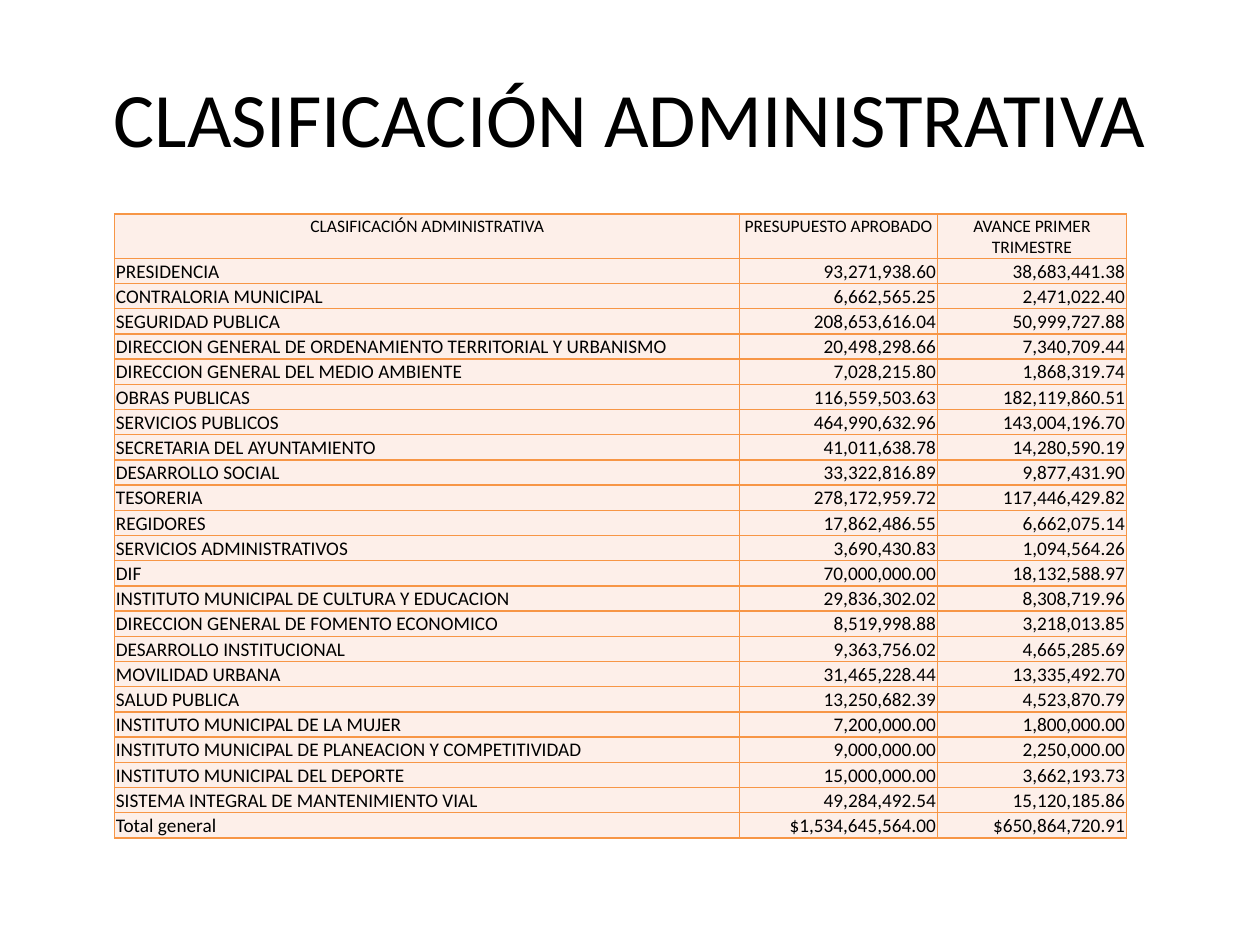
from lxml.etree import SubElement
from pptx import Presentation
from pptx.dml.color import RGBColor
from pptx.enum.text import MSO_ANCHOR as Anchor, PP_ALIGN as Align
from pptx.oxml.ns import qn
from pptx.util import Inches, Pt

FONT = "Calibri"
COLORS = {"text": "000000", "cell": "FDEFE9", "border": "F79646"}

COLUMN_WIDTHS = [4.96, 1.57, 1.5]
HEADER_HEIGHT, ROW_HEIGHT = 0.35, 0.2
COLUMN_ALIGNS = [Align.LEFT, Align.RIGHT, Align.RIGHT]

TITLE = "CLASIFICACIÓN ADMINISTRATIVA"
HEADER = ("CLASIFICACIÓN ADMINISTRATIVA", "PRESUPUESTO APROBADO", "AVANCE PRIMER TRIMESTRE")
BUDGETS = [
    ("PRESIDENCIA", "93,271,938.60", "38,683,441.38"),
    ("CONTRALORIA MUNICIPAL", "6,662,565.25", "2,471,022.40"),
    ("SEGURIDAD PUBLICA", "208,653,616.04", "50,999,727.88"),
    ("DIRECCION GENERAL DE ORDENAMIENTO TERRITORIAL Y URBANISMO", "20,498,298.66", "7,340,709.44"),
    ("DIRECCION GENERAL DEL MEDIO AMBIENTE", "7,028,215.80", "1,868,319.74"),
    ("OBRAS PUBLICAS", "116,559,503.63", "182,119,860.51"),
    ("SERVICIOS PUBLICOS", "464,990,632.96", "143,004,196.70"),
    ("SECRETARIA DEL AYUNTAMIENTO", "41,011,638.78", "14,280,590.19"),
    ("DESARROLLO SOCIAL", "33,322,816.89", "9,877,431.90"),
    ("TESORERIA", "278,172,959.72", "117,446,429.82"),
    ("REGIDORES", "17,862,486.55", "6,662,075.14"),
    ("SERVICIOS ADMINISTRATIVOS", "3,690,430.83", "1,094,564.26"),
    ("DIF", "70,000,000.00", "18,132,588.97"),
    ("INSTITUTO MUNICIPAL DE CULTURA Y EDUCACION", "29,836,302.02", "8,308,719.96"),
    ("DIRECCION GENERAL DE FOMENTO ECONOMICO", "8,519,998.88", "3,218,013.85"),
    ("DESARROLLO INSTITUCIONAL", "9,363,756.02", "4,665,285.69"),
    ("MOVILIDAD URBANA", "31,465,228.44", "13,335,492.70"),
    ("SALUD PUBLICA", "13,250,682.39", "4,523,870.79"),
    ("INSTITUTO MUNICIPAL DE LA MUJER", "7,200,000.00", "1,800,000.00"),
    ("INSTITUTO MUNICIPAL DE PLANEACION Y COMPETITIVIDAD", "9,000,000.00", "2,250,000.00"),
    ("INSTITUTO MUNICIPAL DEL DEPORTE", "15,000,000.00", "3,662,193.73"),
    ("SISTEMA INTEGRAL DE MANTENIMIENTO VIAL", "49,284,492.54", "15,120,185.86"),
    ("Total general", "$1,534,645,564.00", "$650,864,720.91"),
]


def write_text(frame, text, size, align):
    para = frame.paragraphs[0]
    para.text = text
    para.alignment = align
    para.font.name = FONT
    para.font.size = Pt(size)
    para.font.color.rgb = RGBColor.from_string(COLORS["text"])


def add_title(page, text):
    box = page.shapes.add_textbox(Inches(0.5), Inches(0.3), Inches(9), Inches(1.25))
    box.text_frame.word_wrap = True
    box.text_frame.vertical_anchor = Anchor.MIDDLE
    write_text(box.text_frame, text, 44, Align.CENTER)


def add_borders(cell):
    properties = cell._tc.get_or_add_tcPr()
    for side in ("lnL", "lnR", "lnT", "lnB"):
        line = SubElement(properties, qn(f"a:{side}"), w=str(Pt(1)))
        fill = SubElement(line, qn("a:solidFill"))
        SubElement(fill, qn("a:srgbClr"), val=COLORS["border"])


def style_cell(cell, text, size, align, anchor):
    cell.margin_left = cell.margin_right = cell.margin_top = Inches(0.01)
    cell.margin_bottom = 0
    cell.vertical_anchor = anchor
    add_borders(cell)
    cell.fill.solid()
    cell.fill.fore_color.rgb = RGBColor.from_string(COLORS["cell"])
    write_text(cell.text_frame, text, size, align)


def add_budget_table(page):
    rows = [HEADER] + BUDGETS
    heights = [HEADER_HEIGHT] + [ROW_HEIGHT] * len(BUDGETS)
    table = page.shapes.add_table(
        len(rows), len(HEADER), Inches(0.91), Inches(1.7),
        Inches(sum(COLUMN_WIDTHS)), Inches(sum(heights))).table
    for column, width in zip(table.columns, COLUMN_WIDTHS):
        column.width = Inches(width)
    for row, height in zip(table.rows, heights):
        row.height = Inches(height)

    last_row = len(rows) - 1
    for r, values in enumerate(rows):
        for c, text in enumerate(values):
            is_header = r == 0
            # Approved budgets and the total label sit mid-cell
            centered = not is_header and (c == 1 or (r == last_row and c == 0))
            style_cell(table.cell(r, c), text,
                       size=10 if is_header else 11,
                       align=Align.CENTER if is_header else COLUMN_ALIGNS[c],
                       anchor=Anchor.MIDDLE if centered else Anchor.TOP)


def main():
    deck = Presentation()
    deck.slide_width, deck.slide_height = Inches(10), Inches(7.5)
    page = deck.slides.add_slide(deck.slide_layouts[6])
    # Heading
    add_title(page, TITLE)
    # Budget by department
    add_budget_table(page)
    deck.save("out.pptx")


if __name__ == "__main__":
    main()
